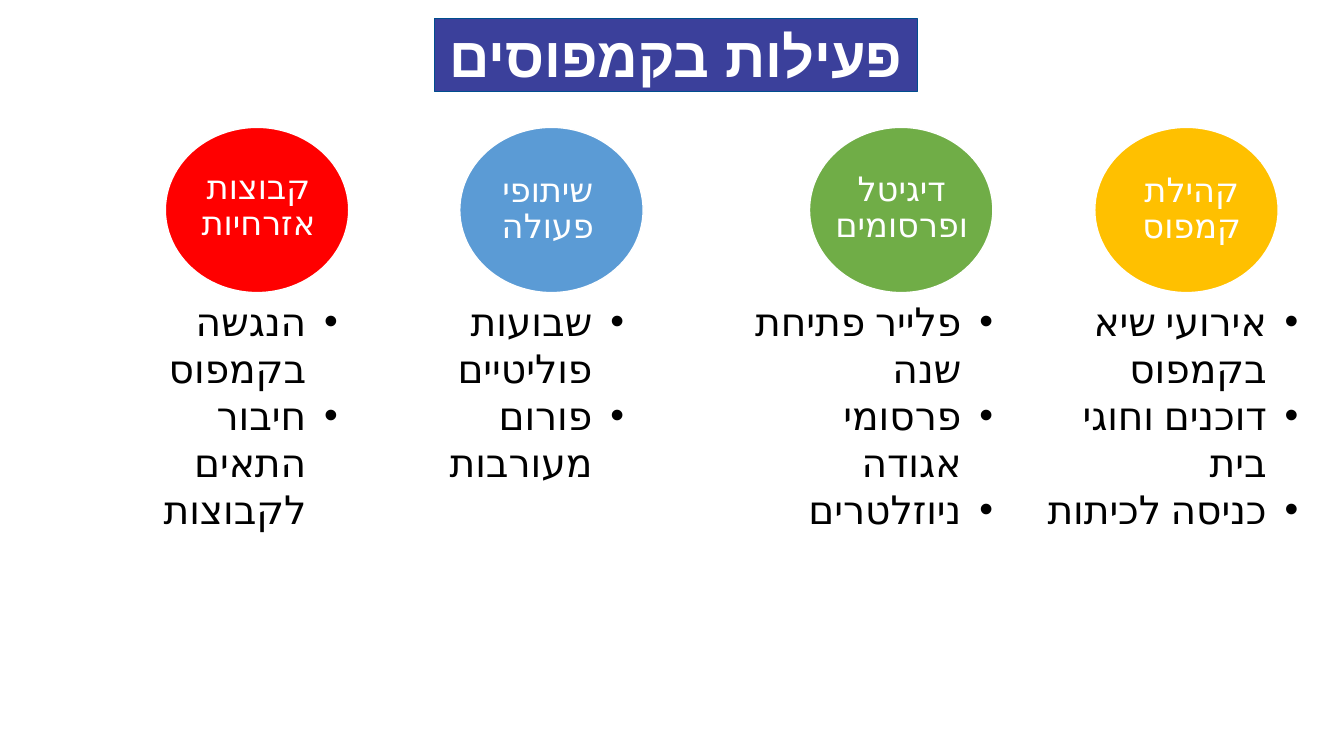
from lxml.etree import SubElement
from pptx import Presentation
from pptx.dml.color import RGBColor
from pptx.enum.lang import MSO_LANGUAGE_ID as Language
from pptx.enum.shapes import MSO_SHAPE as Shape
from pptx.enum.text import MSO_ANCHOR as Anchor, MSO_AUTO_SIZE as AutoSize, PP_ALIGN as Align
from pptx.oxml.ns import qn
from pptx.util import Pt

COLORS = {
    "title": "3B409B",
    "title_line": "004E8E",
    "white": "FFFFFF",
    "black": "000000",
    "gold": "FFC000",
    "green": "70AD47",
    "blue": "5B9BD5",
    "red": "FF0000",
}


def color(name):
    return RGBColor.from_string(COLORS[name])


def write_text(shape, lines, font="Roboto", size=24, ink="white", bold=False,
               align=Align.CENTER, anchor=Anchor.MIDDLE, inset=(7.2, 3.6),
               spacing=1.0, bullet=None):
    frame = shape.text_frame
    frame.word_wrap = True
    frame.auto_size = AutoSize.NONE
    frame.vertical_anchor = anchor
    frame.margin_left = frame.margin_right = Pt(inset[0])
    frame.margin_top = frame.margin_bottom = Pt(inset[1])
    for index, line in enumerate(lines):
        paragraph = frame.paragraphs[0] if index == 0 else frame.add_paragraph()
        paragraph.alignment = align
        paragraph.line_spacing = spacing
        properties = paragraph._p.get_or_add_pPr()
        properties.set("rtl", "1")
        if bullet:
            properties.set("marL", str(Pt(22.5)))
            properties.set("indent", str(Pt(-22.5)))
            SubElement(properties, qn("a:buFont")).set("typeface", "Arial")
            SubElement(properties, qn("a:buChar")).set("char", bullet)
        run = paragraph.add_run()
        run.text = line
        run.font.size = Pt(size)
        run.font.bold = bold
        run.font.color.rgb = color(ink)
        run.font.name = font
        run.font.language_id = Language.HEBREW
        SubElement(run._r.get_or_add_rPr(), qn("a:cs")).set("typeface", font)


presentation = Presentation()
presentation.slide_width = Pt(960)
presentation.slide_height = Pt(540)
slide = presentation.slides.add_slide(presentation.slide_layouts[5])

title = slide.shapes.title
title.left, title.top, title.width, title.height = Pt(310.3), Pt(13.5), Pt(345), Pt(52)
title.fill.solid()
title.fill.fore_color.rgb = color("title")
title.line.color.rgb = color("title_line")
title.line.width = Pt(0.75)
write_text(title, ["פעילות בקמפוסים"], font="Arial", size=40, bold=True)

columns = [
    ("קהילת קמפוס", "gold", 782, (802, 116, 98.6, 67.7), (730, 204.5, 211),
     ["אירועי שיא בקמפוס", "דוכנים וחוגי בית", "כניסה לכיתות"]),
    ("דיגיטל ופרסומים", "green", 578.2, (593.3, 113.8, 101.5, 70.6), (522, 194.4, 244.8),
     ["פלייר פתיחת שנה", "פרסומי אגודה", "ניוזלטרים"]),
    ("שיתופי פעולה", "blue", 328.4, (347, 116, 88.6, 67.7), (289.4, 163.4, 278.6),
     ["שבועות פוליטיים", "פורום מעורבות"]),
    ("קבוצות אזרחיות", "red", 118.1, (140.4, 113.8, 88.6, 67.7), (85, 163.4, 278.6),
     ["הנגשה בקמפוס", "חיבור התאים לקבוצות"]),
]

for heading, fill, circle_left, label_box, list_box, activities in columns:
    circle = slide.shapes.add_shape(
        Shape.OVAL, Pt(circle_left), Pt(91), Pt(131), Pt(118))
    circle.shadow.inherit = False
    circle.fill.solid()
    circle.fill.fore_color.rgb = color(fill)
    circle.line.color.rgb = color("white")
    circle.line.width = Pt(1)

    label = slide.shapes.add_textbox(*map(Pt, label_box))
    label.fill.solid()
    label.fill.fore_color.rgb = color(fill)
    write_text(label, [heading], inset=(1.2, 1.2), spacing=0.9)

    left, width, height = list_box
    activity_list = slide.shapes.add_textbox(Pt(left), Pt(209), Pt(width), Pt(height))
    write_text(activity_list, activities, size=28, ink="black", align=Align.RIGHT,
               anchor=Anchor.TOP, bullet="•")

presentation.save("out.pptx")
